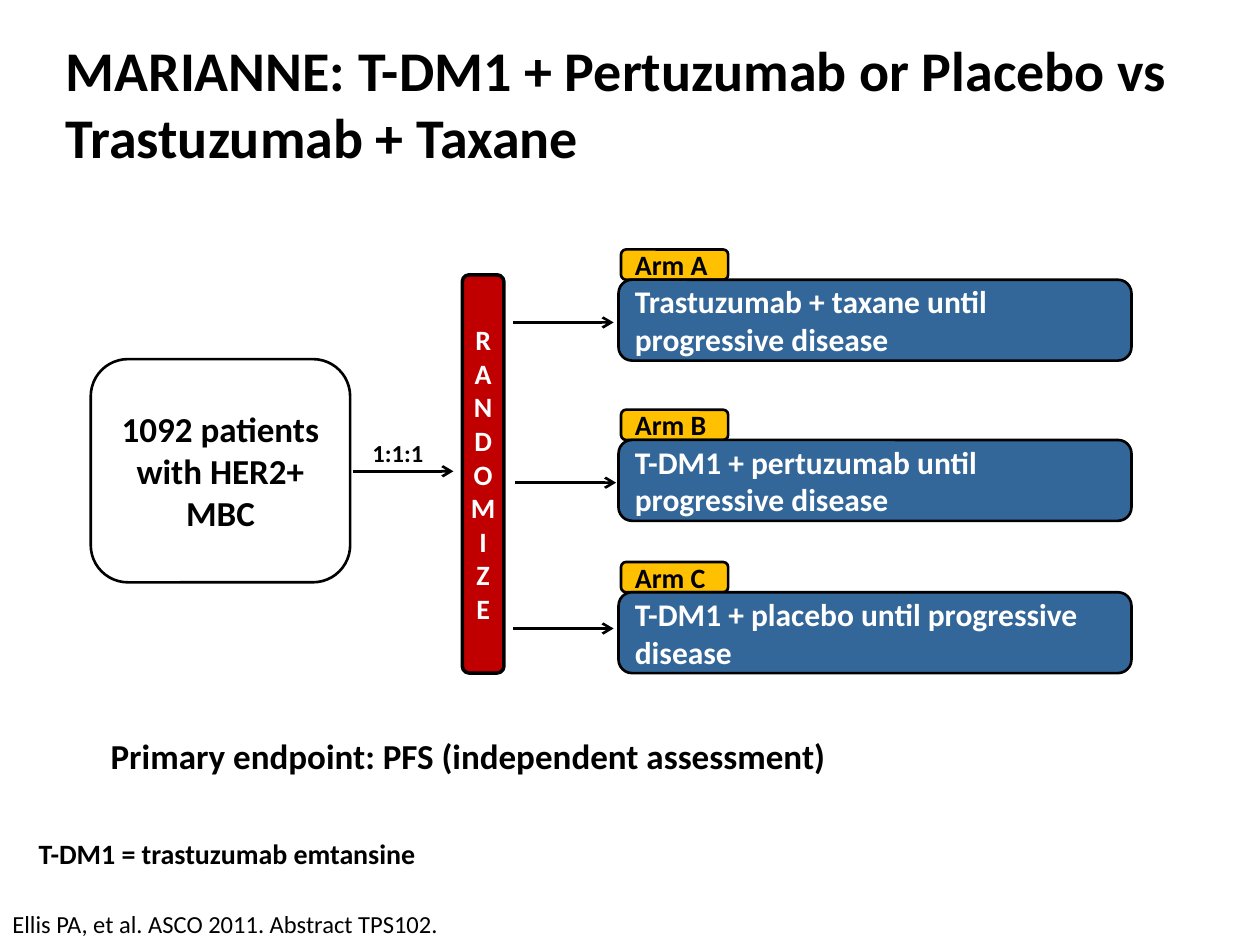
from dataclasses import dataclass

from lxml import etree
from pptx import Presentation
from pptx.dml.color import RGBColor
from pptx.enum.shapes import MSO_CONNECTOR, MSO_SHAPE
from pptx.enum.text import MSO_ANCHOR, MSO_AUTO_SIZE, PP_ALIGN
from pptx.oxml.ns import qn
from pptx.util import Cm, Pt

STRAIGHT = MSO_CONNECTOR.STRAIGHT
ROUNDED = MSO_SHAPE.ROUNDED_RECTANGLE
MIDDLE = MSO_ANCHOR.MIDDLE
FIT_SHAPE = MSO_AUTO_SIZE.SHAPE_TO_FIT_TEXT
FIXED_SIZE = MSO_AUTO_SIZE.NONE
LEFT, CENTER = PP_ALIGN.LEFT, PP_ALIGN.CENTER


@dataclass(frozen=True)
class Theme:
    font: str = "Calibri"
    black: str = "000000"
    white: str = "FFFFFF"
    gold: str = "FFC000"
    red: str = "C00000"
    blue: str = "336699"
    title: int = 32
    large: int = 20
    treatment: int = 18
    label: int = 16
    small: int = 14
    line: float = 1.5
    heavy_line: float = 2


def write_text(text_frame, text, *, theme, size, color, bold=True, align=LEFT, space_after=0):
    text_frame.text = text
    paragraph = text_frame.paragraphs[0]
    paragraph.alignment = align
    paragraph.space_after = Pt(space_after)
    font = paragraph.runs[0].font
    font.name = theme.font
    font.size = Pt(size)
    font.bold = bold
    font.color.rgb = RGBColor.from_string(color)


class SlideBuilder:
    def __init__(self, slide, theme):
        self.slide = slide
        self.theme = theme

    def title(self, text, left, top, width, height):
        shape = self.slide.shapes.title
        shape.left, shape.top = Cm(left), Cm(top)
        shape.width, shape.height = Cm(width), Cm(height)
        text_frame = shape.text_frame
        text_frame.auto_size = FIXED_SIZE
        text_frame.vertical_anchor = MIDDLE
        write_text(text_frame, text, theme=self.theme, size=self.theme.title,
                   color=self.theme.black)

    def box(self, text, left, top, width, height, *, fill, size, color,
            align=LEFT, line=None, inset=None, stacked=False):
        shape = self.slide.shapes.add_shape(ROUNDED, Cm(left), Cm(top), Cm(width), Cm(height))
        shape.shadow.inherit = False
        shape.fill.solid()
        shape.fill.fore_color.rgb = RGBColor.from_string(fill)
        shape.line.color.rgb = RGBColor.from_string(self.theme.black)
        shape.line.width = Pt(line or self.theme.line)
        text_frame = shape.text_frame
        text_frame.word_wrap = True
        text_frame.vertical_anchor = MIDDLE
        if inset is not None:
            text_frame.margin_left = text_frame.margin_right = Cm(inset)
            text_frame.margin_top = text_frame.margin_bottom = Cm(inset)
        if stacked:
            shape.element.txBody.find(qn("a:bodyPr")).set("vert", "wordArtVert")
        write_text(text_frame, text, theme=self.theme, size=size, color=color, align=align)

    def label(self, text, left, top, width, height, *, size, wrap=False, **text_format):
        shape = self.slide.shapes.add_textbox(Cm(left), Cm(top), Cm(width), Cm(height))
        text_frame = shape.text_frame
        text_frame.word_wrap = wrap
        text_frame.auto_size = FIT_SHAPE
        write_text(text_frame, text, theme=self.theme, size=size,
                   color=self.theme.black, **text_format)

    def arrow(self, left, top, length=2.03):
        connector = self.slide.shapes.add_connector(
            STRAIGHT, Cm(left), Cm(top), Cm(left + length), Cm(top))
        connector.line.color.rgb = RGBColor.from_string(self.theme.black)
        connector.line.width = Pt(self.theme.line)
        etree.SubElement(connector.line._get_or_add_ln(), qn("a:tailEnd"), type="arrow")
        etree.SubElement(connector.element.spPr, qn("a:effectLst"))

    def arm(self, name, treatment, top, arrow_left, arrow_top):
        theme = self.theme
        tag_height = 0.61
        self.arrow(arrow_left, arrow_top)
        self.box(name, 12.52, top - tag_height, 2.16, tag_height,
                 fill=theme.gold, size=theme.label, color=theme.black)
        self.box(treatment, 12.47, top, 10.34, 1.63,
                 fill=theme.blue, size=theme.treatment, color=theme.white)


def main():
    presentation = Presentation()
    presentation.slide_width = Cm(25.4)
    presentation.slide_height = Cm(19.05)
    theme = Theme()
    slide = presentation.slides.add_slide(presentation.slide_layouts[5])
    builder = SlideBuilder(slide, theme)

    builder.title("MARIANNE: T-DM1 + Pertuzumab or Placebo vs Trastuzumab + Taxane",
                  1.07, 0.76, 23.06, 2.62)
    builder.box("1092 patients with HER2+ MBC", 1.83, 7.24, 5.23, 4.5,
                fill=theme.white, size=theme.large, color=theme.black,
                align=CENTER, inset=0.25)
    builder.arrow(7.11, 9.5)
    builder.label("1:1:1", 7.26, 8.71, 1.55, 0.86, size=theme.small)
    builder.box("RANDOMIZE", 9.32, 5.54, 0.84, 8.03,
                fill=theme.red, size=theme.label, color=theme.white,
                align=CENTER, line=theme.heavy_line, inset=0, stacked=True)

    arms = [
        ("Arm A", "Trastuzumab + taxane until progressive disease", 5.64, 10.34, 6.5),
        ("Arm B", "T-DM1 + pertuzumab until progressive disease", 8.87, 10.39, 9.73),
        ("Arm C", "T-DM1 + placebo until progressive disease", 11.94, 10.34, 12.67),
    ]
    for arm in arms:
        builder.arm(*arm)

    builder.label("Primary endpoint: PFS (independent assessment)", 1.98, 14.68, 20.55, 1.12,
                  size=theme.large, wrap=True, space_after=3)
    builder.label("T-DM1 = trastuzumab emtansine", 0.53, 16.74, 8.23, 0.94, size=theme.label)
    builder.label("Ellis PA, et al. ASCO 2011. Abstract TPS102.", 0, 18.21, 9.17, 0.86,
                  size=theme.small, bold=False)

    presentation.save("out.pptx")


if __name__ == "__main__":
    main()
